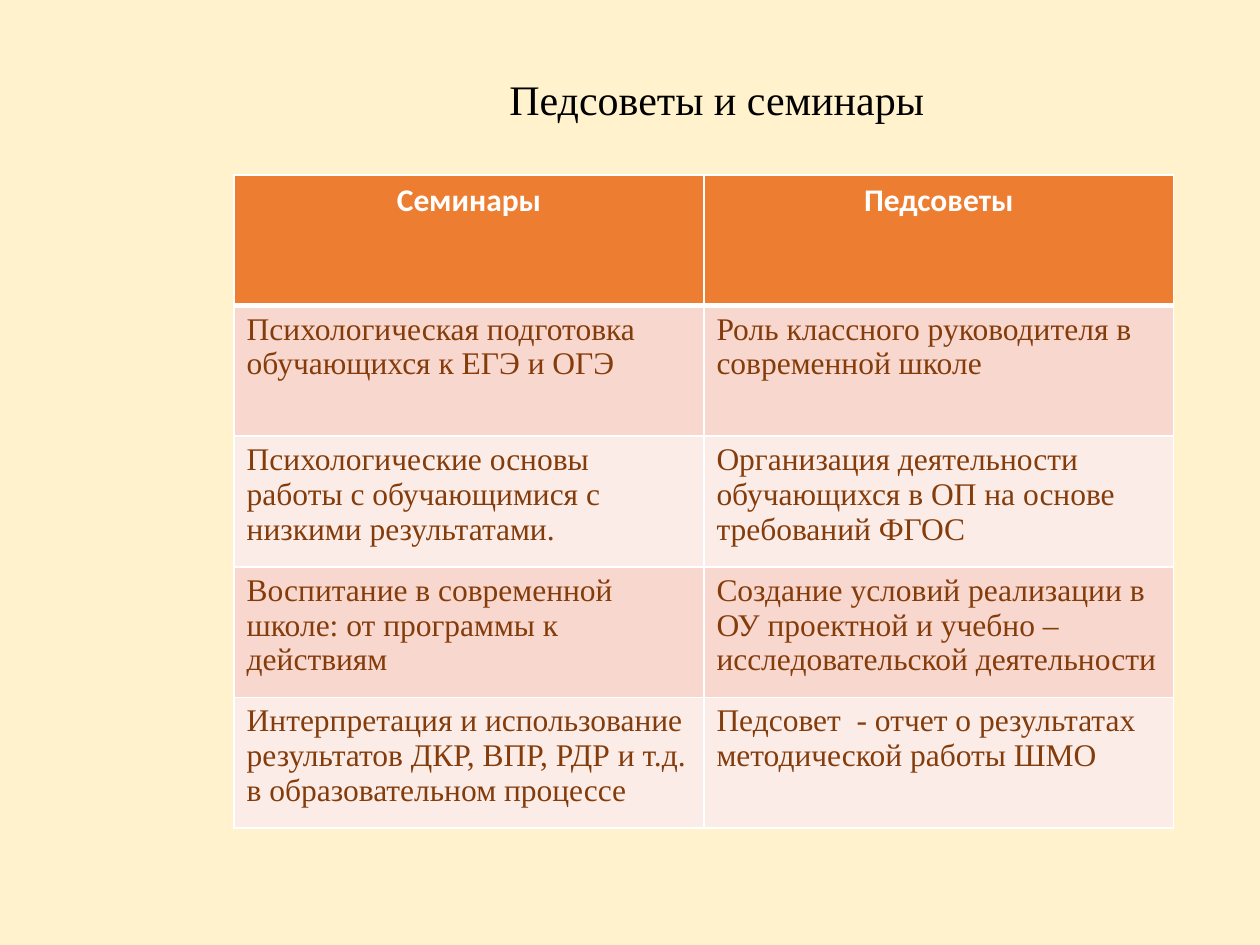
from lxml import etree
from pptx import Presentation
from pptx.dml.color import RGBColor
from pptx.enum import text as t
from pptx.oxml import ns
from pptx.util import Cm, Pt

CREAM = RGBColor(0xFF, 0xF2, 0xCC)
ORANGE = RGBColor(0xED, 0x7D, 0x31)
DARK_BAND = RGBColor(0xF8, 0xD7, 0xCE)
LIGHT_BAND = RGBColor(0xFC, 0xEC, 0xE8)
BROWN = RGBColor(0x84, 0x3C, 0x0B)
WHITE = RGBColor(0xFF, 0xFF, 0xFF)
BLACK = RGBColor(0, 0, 0)

SERIF = "Times New Roman"
SANS = "Calibri"

HEADINGS = ("Семинары", "Педсоветы")
TOPICS = [
    ("Психологическая подготовка обучающихся к ЕГЭ и ОГЭ",
     "Роль классного руководителя в современной школе"),
    ("Психологические основы работы с обучающимися с низкими результатами.",
     "Организация деятельности обучающихся в ОП на основе требований ФГОС"),
    ("Воспитание в современной школе: от программы к действиям",
     "Создание условий реализации в ОУ проектной и учебно – "
     "исследовательской деятельности"),
    ("Интерпретация и использование результатов ДКР, ВПР, РДР и т.д. "
     "в образовательном процессе",
     "Педсовет  - отчет о результатах методической работы ШМО"),
]


def add_run(paragraph, wording, font_name, size, color, bold=False):
    run = paragraph.add_run()
    run.text = wording
    run.font.name = font_name
    run.font.size = Pt(size)
    run.font.bold = bold
    run.font.color.rgb = color


def set_borders(cell, bottom_width):
    """Draw white cell borders, 1 pt wide except at the bottom."""
    properties = cell._tc.get_or_add_tcPr()
    widths = {"a:lnL": 1, "a:lnR": 1, "a:lnT": 1, "a:lnB": bottom_width}
    for side, width in widths.items():
        line = etree.SubElement(properties, ns.qn(side), w=str(Pt(width)))
        fill = etree.SubElement(line, ns.qn("a:solidFill"))
        etree.SubElement(fill, ns.qn("a:srgbClr"), val=str(WHITE))


def fill_cell(cell, color, bottom_width=1):
    set_borders(cell, bottom_width)
    cell.fill.solid()
    cell.fill.fore_color.rgb = color


def add_title(slide, wording):
    title = slide.shapes.title
    title.left, title.top = Cm(1.75), Cm(0.38)
    title.width, title.height = Cm(21.9), Cm(2.92)
    frame = title.text_frame
    frame.word_wrap = True
    frame.auto_size = t.MSO_AUTO_SIZE.NONE
    frame.vertical_anchor = t.MSO_ANCHOR.MIDDLE
    frame.margin_left, frame.margin_top = Cm(3.75), Cm(0.56)
    paragraph = frame.paragraphs[0]
    paragraph.alignment = t.PP_ALIGN.CENTER
    paragraph.line_spacing = 0.9
    add_run(paragraph, wording, SERIF, 24, BLACK)


def add_topics_table(slide):
    table = slide.shapes.add_table(
        len(TOPICS) + 1, len(HEADINGS),
        Cm(4.72), Cm(3.53), Cm(18.94), Cm(13.16)).table
    for column, heading in enumerate(HEADINGS):
        cell = table.cell(0, column)
        fill_cell(cell, ORANGE, bottom_width=3)
        paragraph = cell.text_frame.paragraphs[0]
        paragraph.alignment = t.PP_ALIGN.CENTER
        add_run(paragraph, heading, SANS, 18, WHITE, bold=True)
    for row, topics in enumerate(TOPICS, start=1):
        for column, topic in enumerate(topics):
            cell = table.cell(row, column)
            fill_cell(cell, DARK_BAND if row % 2 else LIGHT_BAND)
            add_run(cell.text_frame.paragraphs[0], topic, SERIF, 18, BROWN)


def main():
    presentation = Presentation()
    presentation.slide_width, presentation.slide_height = Cm(25.4), Cm(19.05)
    slide = presentation.slides.add_slide(presentation.slide_layouts[5])
    slide.background.fill.solid()
    slide.background.fill.fore_color.rgb = CREAM
    add_title(slide, "Педсоветы и семинары")
    add_topics_table(slide)
    presentation.save("out.pptx")


if __name__ == "__main__":
    main()
